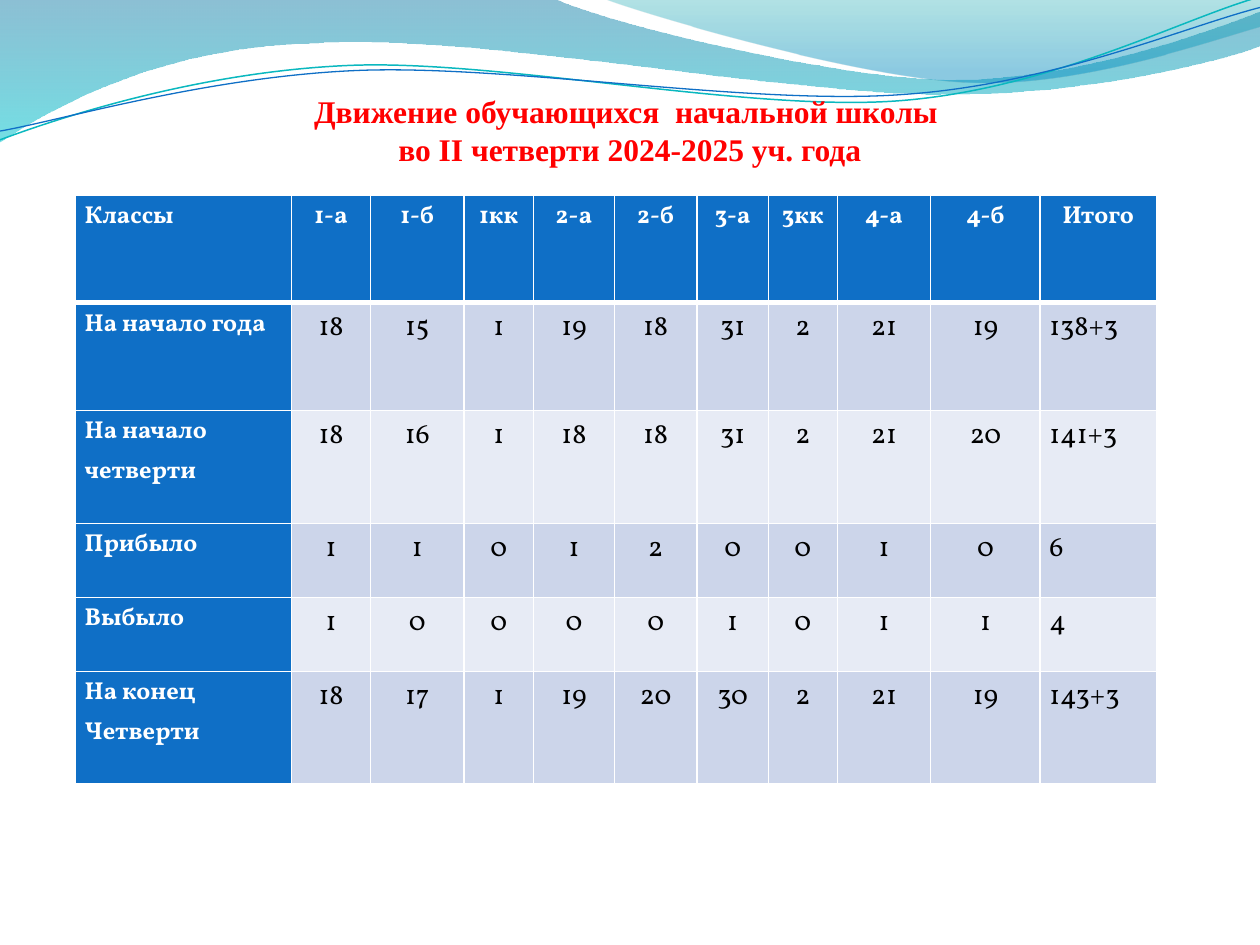
import math
from dataclasses import dataclass
from typing import Any

from lxml import etree
from pptx import Presentation
from pptx import util as u
from pptx.dml import color
from pptx.enum import text
from pptx.oxml import ns

COLORS = {
    "white": "FFFFFF", "black": "000000", "title": "FF0000", "label": "0F6FC6",
    "odd": "CCD5EA", "even": "E7EBF5", "teal_line": "0AB8BF",
    "deep_blue": "0074A1", "cyan": "00C6CF", "teal": "00A1A9", "blue": "008BBF",
}
Point = tuple[float, float]


@dataclass
class GradientStop:
    position: float
    color: str
    opacity: int


@dataclass
class Wave:
    start: Point
    segments: list[tuple[Point, ...]]
    stops: tuple[GradientStop, ...] = ()
    line: str = ""
    width: float = 0
    rotation: float = 0
    center: Point = (0, 0)


WAVES = [
    Wave((0, 0), [
        ((316.8, -0.7),),
        ((342.7, 12.2), (478, 45.4), (545.8, 45.4)),
        ((614.2, 45.4), (689.8, 18.7), (720, 6.5)),
        ((720.7, 25.9),),
        ((707.8, 31.7), (626.4, 54.7), (537.1, 54)),
        ((447.8, 54), (275, 20.2), (185, 24.5)),
        ((92.9, 25.9), (33.1, 59.8), (-0.7, 81.4)),
        ((0, 0),),
    ], (GradientStop(0, "deep_blue", 45), GradientStop(1, "cyan", 55))),
    Wave((344.9, -0.7), [
        ((366.5, 7.9), (491, 44.6), (553.7, 46.8)),
        ((616.3, 49.7), (691.9, 23), (720, 15.1)),
        ((720, 0),),
        ((344.9, -0.7),),
    ], (GradientStop(0, "teal", 30), GradientStop(0.8, "blue", 45))),
    Wave((0, 79.9), [
        ((34.6, 67), (113.8, 41), (199.4, 37.4)),
        ((284.4, 33.8), (427, 64.1), (513.4, 57.6)),
        ((599.8, 51.1), (675.4, 10.8), (718.6, -1.4)),
    ], line="teal_line", width=0.85, rotation=-2.7, center=(359.3, 41.4)),
    Wave((0, 74.9), [
        ((33.8, 69.1), (118.1, 43.9), (203.8, 40.3)),
        ((290.2, 36.7), (429.8, 60.5), (516.2, 54)),
        ((601.9, 48.2), (677.5, 15.1), (720, 4.3)),
    ], line="label", width=0.75, rotation=-2.7, center=(359.6, 42.5)),
]

TITLE_LINES = ["Движение обучающихся  начальной школы ",
               "во II четверти 2024-2025 уч. года"]
COLUMN_WIDTHS = [123.4, 45.2, 53.4, 39.7, 46.3, 47.1, 40.9, 39.4, 53.4, 62.6, 66.4]
ROW_HEIGHTS = [61.5, 61.6, 64.6, 42.3, 42.3, 64]
ROWS = [
    ["Классы", "1-а", "1-б", "1кк", "2-а", "2-б", "3-а", "3кк", "4-а", "4-б", "Итого"],
    ["На начало года", 18, 15, 1, 19, 18, 31, 2, 21, 19, "138+3"],
    ["На начало четверти", 18, 16, 1, 18, 18, 31, 2, 21, 20, "141+3"],
    ["Прибыло", 1, 1, 0, 1, 2, 0, 0, 1, 0, 6],
    ["Выбыло", 1, 0, 0, 0, 0, 1, 0, 1, 1, 4],
    ["На конец\nЧетверти", 18, 17, 1, 19, 20, 30, 2, 21, 19, "143+3"],
]


def rgb(name: str) -> color.RGBColor:
    return color.RGBColor.from_string(COLORS[name])


def set_values(target: Any, values: dict[str, Any]) -> None:
    for name, value in values.items():
        setattr(target, name, value)


def write_lines(frame: Any, lines: list[str], paragraph_format: dict[str, Any],
                font_format: dict[str, Any], font_color: str) -> None:
    for index, line in enumerate(lines):
        paragraph = frame.add_paragraph() if index else frame.paragraphs[0]
        set_values(paragraph, paragraph_format)
        run = paragraph.add_run()
        run.text = line
        set_values(run.font, font_format)
        run.font.color.rgb = rgb(font_color)


def unrotated(point: Point, wave: Wave) -> Point:
    angle = math.radians(-wave.rotation)
    x, y = point[0] - wave.center[0], point[1] - wave.center[1]
    return (u.Pt(wave.center[0] + x * math.cos(angle) - y * math.sin(angle)),
            u.Pt(wave.center[1] + x * math.sin(angle) + y * math.cos(angle)))


def bend_segments(shape: Any, segments: list[tuple[Point, ...]]) -> None:
    lines = iter(list(shape._element.iter(ns.qn("a:lnTo"))))
    for segment in segments:
        first, *others = [next(lines) for _ in segment]
        if others:
            first.tag = ns.qn("a:cubicBezTo")
            for other in others:
                first.append(other[0])
                other.getparent().remove(other)


def draw_wave(slide: Any, wave: Wave) -> None:
    vertices = [wave.start, *(point for segment in wave.segments for point in segment)]
    points = [unrotated(vertex, wave) for vertex in vertices]
    builder = slide.shapes.build_freeform(*points[0])
    builder.add_line_segments(points[1:], close=bool(wave.stops))
    shape = builder.convert_to_shape()
    bend_segments(shape, wave.segments)
    shape.rotation = wave.rotation
    shape.shadow.inherit = False
    if not wave.stops:
        shape.fill.background()
        shape.line.width = u.Pt(wave.width)
        shape.line.color.rgb = rgb(wave.line)
        return
    shape.line.fill.background()
    shape.fill.gradient()
    shape.fill.gradient_angle = 270
    for target, stop in zip(shape.fill.gradient_stops, wave.stops):
        target.position = stop.position
        target.color.rgb = rgb(stop.color)
    for element, stop in zip(shape._element.iter(ns.qn("a:srgbClr")), wave.stops):
        etree.SubElement(element, ns.qn("a:alpha"), val=str(stop.opacity * 1000))


def set_borders(cell: Any, widths: dict[str, float]) -> None:
    properties = cell._tc.get_or_add_tcPr()
    for index, (side, width) in enumerate(widths.items()):
        line = etree.Element(ns.qn(f"a:ln{side}"), w=str(u.Pt(width)))
        fill = etree.SubElement(line, ns.qn("a:solidFill"))
        etree.SubElement(fill, ns.qn("a:srgbClr"), val=COLORS["white"])
        properties.insert(index, line)


def draw_cell(cell: Any, value: Any, row: int, column: int) -> None:
    is_label = row == 0 or column == 0
    is_left = column == 0 or (row > 0 and column == len(COLUMN_WIDTHS) - 1)
    set_values(cell, {"margin_left": u.Pt(5.2), "margin_right": u.Pt(5.2),
                      "margin_top": 0, "margin_bottom": 0,
                      "vertical_anchor": text.MSO_ANCHOR.TOP})
    cell.fill.solid()
    cell.fill.fore_color.rgb = rgb("label" if is_label else "odd" if row % 2 else "even")
    set_borders(cell, {"L": 1, "R": 1, "T": 3 if row == 1 else 1, "B": 3 if row == 0 else 1})
    alignment = text.PP_ALIGN.LEFT if is_left else text.PP_ALIGN.CENTER
    write_lines(cell.text_frame, str(value).split("\n"),
                {"alignment": alignment, "line_spacing": 1.15},
                {"name": "Vollkorn", "size": u.Pt(14 if is_label else 16), "bold": is_label},
                "white" if is_label else "black")


def draw_table(slide: Any) -> None:
    table = slide.shapes.add_table(
        len(ROWS), len(COLUMN_WIDTHS), u.Pt(43.2), u.Pt(111.5),
        u.Pt(sum(COLUMN_WIDTHS)), u.Pt(sum(ROW_HEIGHTS))).table
    for column, width in zip(table.columns, COLUMN_WIDTHS):
        column.width = u.Pt(width)
    for row, height in zip(table.rows, ROW_HEIGHTS):
        row.height = u.Pt(height)
    for row_index, values in enumerate(ROWS):
        for column_index, value in enumerate(values):
            draw_cell(table.cell(row_index, column_index), value, row_index, column_index)


def draw_title(slide: Any) -> None:
    title = slide.shapes.title
    set_values(title, {"left": u.Pt(42.5), "top": u.Pt(49),
                       "width": u.Pt(635), "height": u.Pt(51)})
    set_values(title.text_frame, {"word_wrap": True, "auto_size": text.MSO_AUTO_SIZE.NONE,
                                  "vertical_anchor": text.MSO_ANCHOR.TOP})
    write_lines(title.text_frame, TITLE_LINES, {"alignment": text.PP_ALIGN.CENTER},
                {"name": "Times New Roman", "size": u.Pt(18), "bold": True}, "title")
    title._element.getparent().append(title._element)


def main() -> None:
    presentation = Presentation()
    set_values(presentation, {"slide_width": u.Pt(720), "slide_height": u.Pt(540)})
    slide = presentation.slides.add_slide(presentation.slide_layouts[5])
    for wave in WAVES:
        draw_wave(slide, wave)
    draw_table(slide)
    draw_title(slide)
    presentation.save("out.pptx")


if __name__ == "__main__":
    main()
